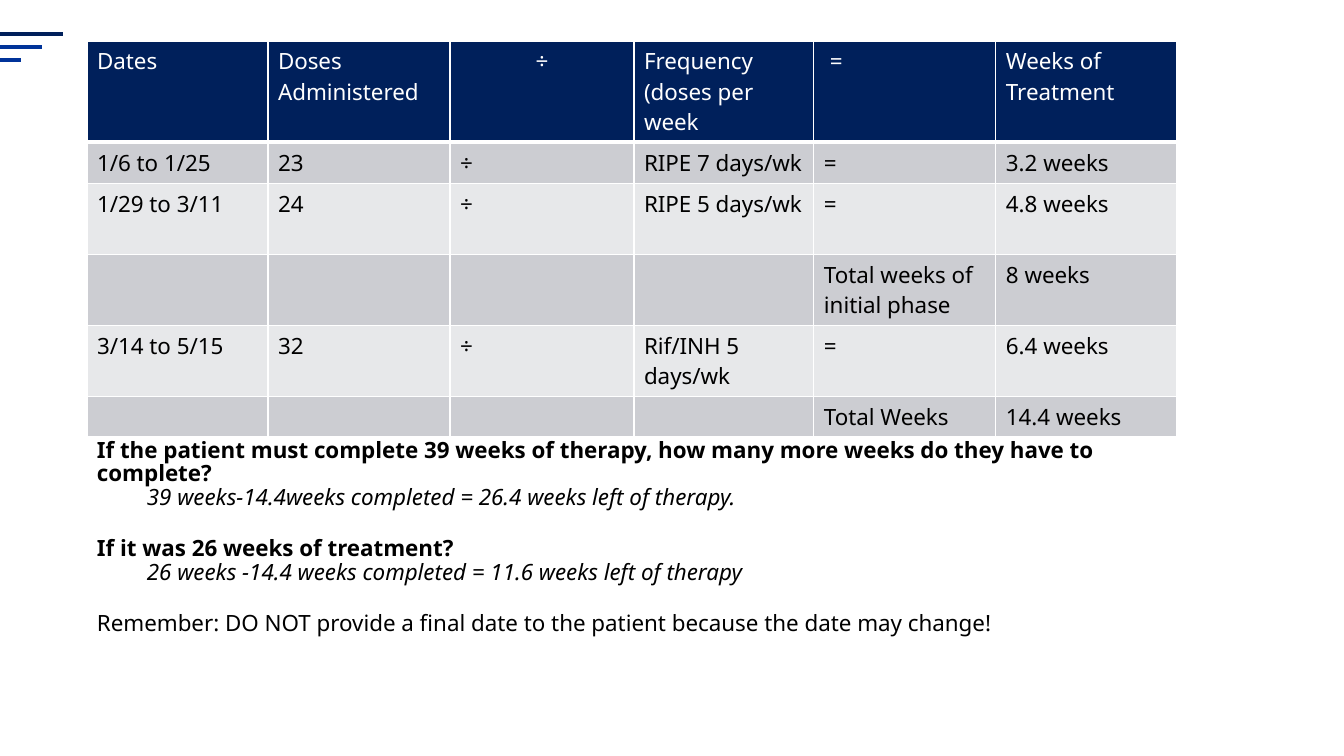
from lxml import etree
from pptx import Presentation
from pptx import util as u
from pptx.dml.color import RGBColor
from pptx.enum import shapes, text
from pptx.oxml.ns import qn

NAVY, BLUE, WHITE, BLACK = "00205B", "003399", "FFFFFF", "000000"
BANDS = ("CCCDD2", "E7E8EA")
COLUMNS = (181, 182, 184, 180, 182, 181)
ROWS = (101, 41, 71, 71, 71, 40)
TREATMENT = (
    ("Dates", "Doses Administered", "÷", "Frequency\n(doses per week", " =", "Weeks of Treatment"),
    ("1/6 to 1/25", "23", "÷", "RIPE 7 days/wk", "=", "3.2 weeks"),
    ("1/29 to 3/11", "24", "÷", "RIPE 5 days/wk", "=", "4.8 weeks"),
    ("", "", "", "", "Total weeks of initial phase", "8 weeks"),
    ("3/14 to 5/15", "32", "÷", "Rif/INH 5 days/wk", "=", "6.4 weeks"),
    ("", "", "", "", "Total Weeks", "14.4 weeks"),
)
QUESTION, ANSWER, REMINDER = "question", "answer", "reminder"
NOTES = (
    (QUESTION, "If the patient must complete 39 weeks of therapy, "
               "how many more weeks do they have to complete?"),
    (ANSWER, "39 weeks-14.4weeks completed = 26.4 weeks left of therapy."),
    (QUESTION, "If it was 26 weeks of treatment?"),
    (ANSWER, "26 weeks -14.4 weeks completed = 11.6 weeks left of therapy"),
    (REMINDER, "Remember: DO NOT provide a final date to the patient because the date may change!"),
)


def px(count):
    """Turn pixels into EMU."""
    return u.Emu(round(count * 914400 / 100.8))


def colour(value):
    """Turn a hex string into a colour."""
    return RGBColor.from_string(value)


class Painter:
    """Hold the text style and the current slide."""

    def __init__(self, page, font="Noto Sans", size=16):
        """Keep the page and its font."""
        self.page, self.font, self.size = page, font, size

    def span(self, para, words, ink=BLACK, bold=False, italic=False):
        """Add one styled run."""
        span = para.add_run()
        span.text = words
        span.font.name, span.font.size = self.font, u.Pt(self.size)
        span.font.bold, span.font.italic = bold, italic
        span.font.color.rgb = colour(ink)

    def rule(self, left, top, right, ink):
        """Draw a horizontal line."""
        line = self.page.shapes.add_connector(
            shapes.MSO_CONNECTOR.STRAIGHT, px(right), px(top), px(left), px(top))
        line.line.color.rgb, line.line.width = colour(ink), u.Pt(3)
        etree.SubElement(line._element.spPr, qn("a:effectLst"))

    def borders(self, cell, bottom):
        """Give a cell white edges with the given bottom width."""
        edges = cell._tc.get_or_add_tcPr()
        for side, width in zip("LRTB", (1, 1, 1, bottom)):
            edge = etree.SubElement(edges, qn(f"a:ln{side}"), w=str(u.Pt(width)))
            fill = etree.SubElement(edge, qn("a:solidFill"))
            etree.SubElement(fill, qn("a:srgbClr"), val=WHITE)

    def cell(self, cell, words, header, fill):
        """Fill one table cell."""
        self.borders(cell, 3 if header else 1)
        cell.fill.solid()
        cell.fill.fore_color.rgb = colour(fill)
        frame = cell.text_frame
        for index, part in enumerate(words.split("\n")):
            para = frame.add_paragraph() if index else frame.paragraphs[0]
            if part:
                self.span(para, part, WHITE if header else BLACK)
            else:
                etree.SubElement(para._p, qn("a:endParaRPr"), sz=str(self.size * 100))
            if header and part == "÷":
                para.alignment = text.PP_ALIGN.CENTER

    def table(self, left, top, columns, rows, values):
        """Add a banded table with a dark header."""
        grid = self.page.shapes.add_table(
            len(rows), len(columns), px(left), px(top), px(sum(columns)), px(sum(rows))).table
        for column, width in zip(grid.columns, columns):
            column.width = px(width)
        for index, (row, height) in enumerate(zip(grid.rows, rows)):
            row.height = px(height)
            fill = BANDS[(index - 1) % 2] if index else NAVY
            for cell, words in zip(row.cells, values[index]):
                self.cell(cell, words, index == 0, fill)

    def notes(self, left, top, width, height, entries):
        """Add the questions with indented answers."""
        box = self.page.shapes.add_textbox(px(left), px(top), px(width), px(height))
        frame = box.text_frame
        frame.word_wrap = True
        for index, (kind, words) in enumerate(entries):
            para = frame.add_paragraph() if index else frame.paragraphs[0]
            para.line_spacing = 0.89
            if kind == ANSWER:
                para._p.get_or_add_pPr().set("marL", str(px(50)))
            elif index:
                para.space_before = px(27)
            self.span(para, words, bold=kind == QUESTION, italic=kind == ANSWER)


def main():
    """Build the treatment weeks slide."""
    deck = Presentation()
    deck.slide_width, deck.slide_height = px(1344), px(756)
    painter = Painter(deck.slides.add_slide(deck.slide_layouts[6]))
    for step, ink in enumerate((NAVY, BLUE, BLUE)):
        painter.rule(0, 34 + 13 * step, 63 - 21 * step, ink)
    painter.table(87, 41, COLUMNS, ROWS, TREATMENT)
    painter.notes(87, 434, 1092, 285, NOTES)
    deck.save("out.pptx")


if __name__ == "__main__":
    main()
